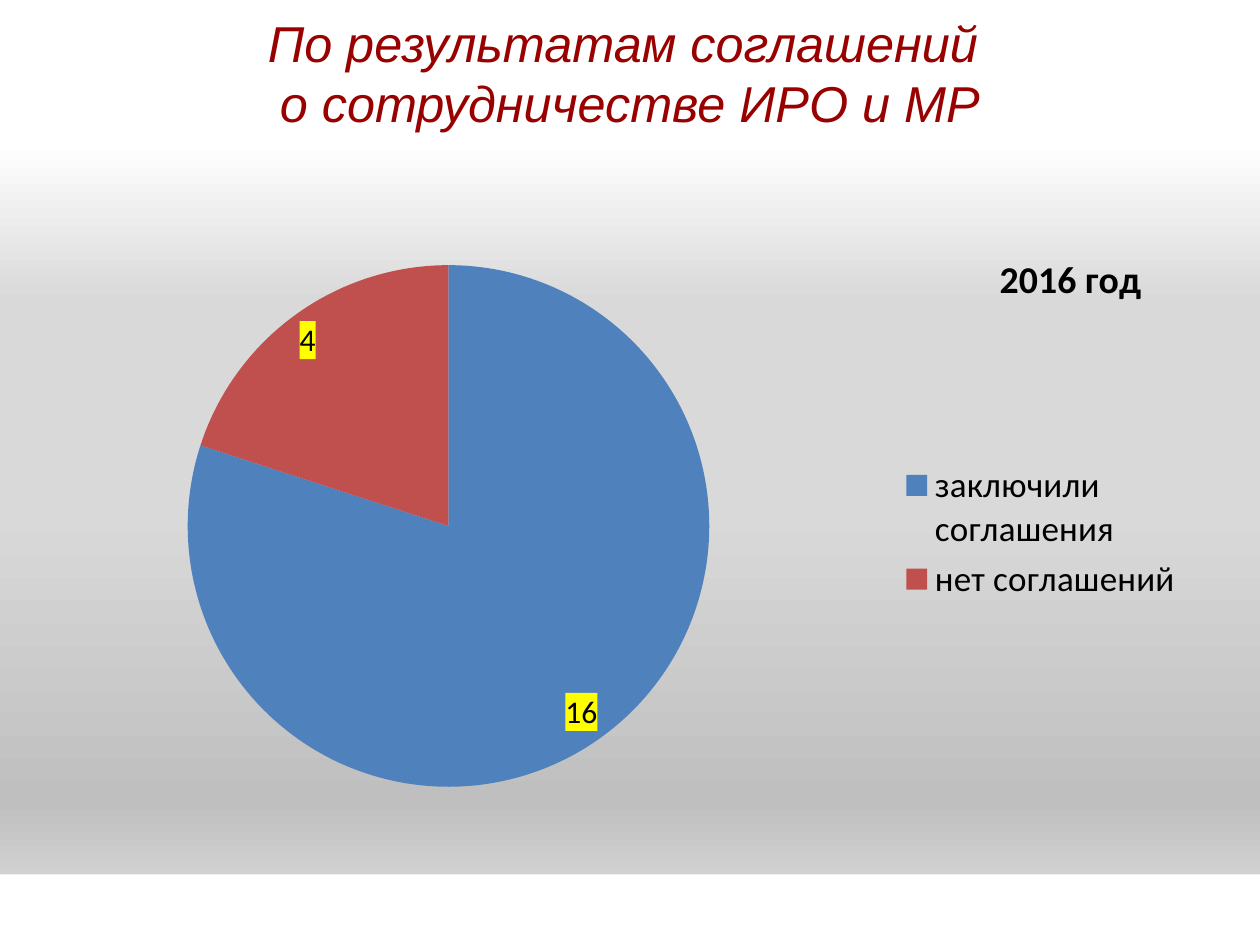
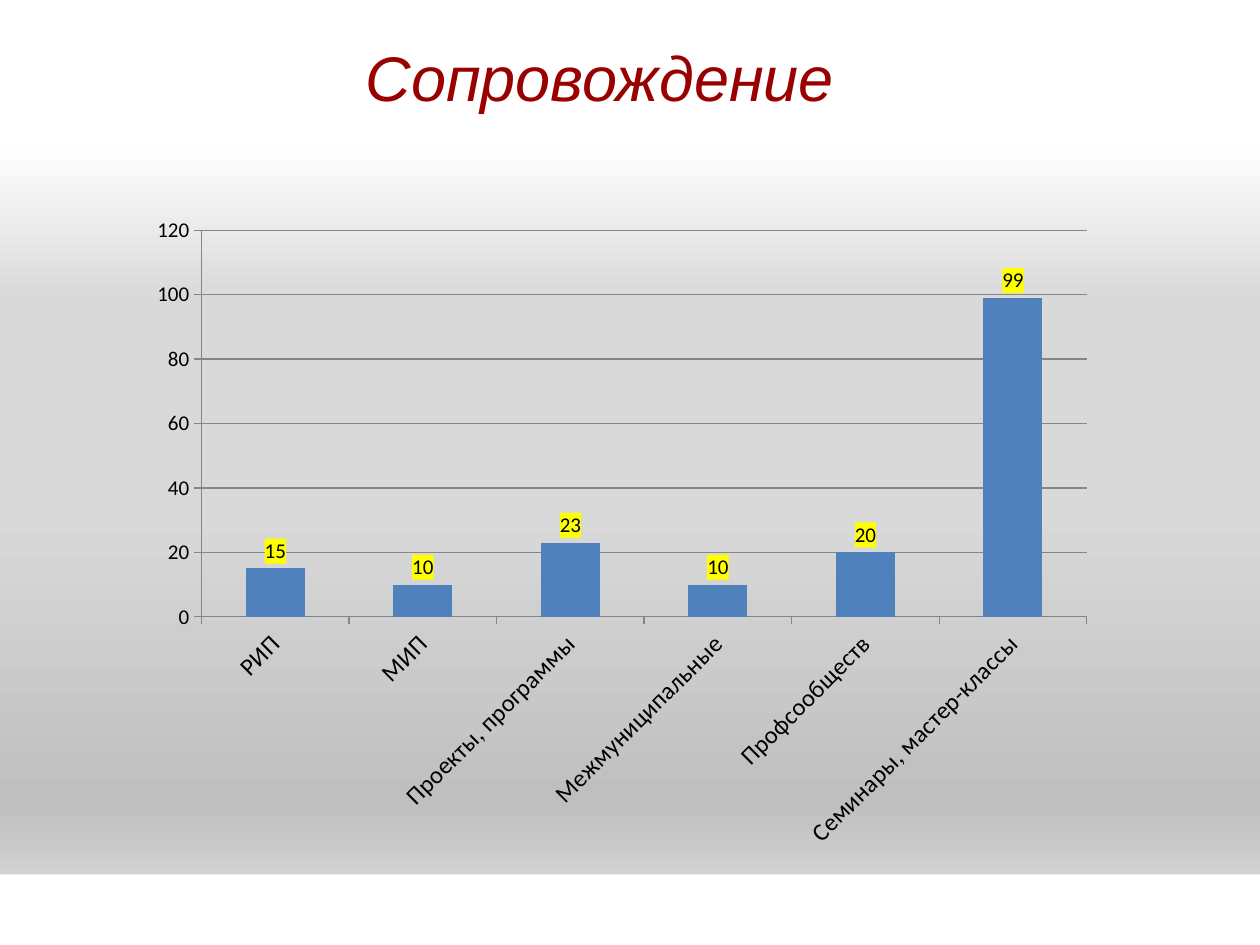
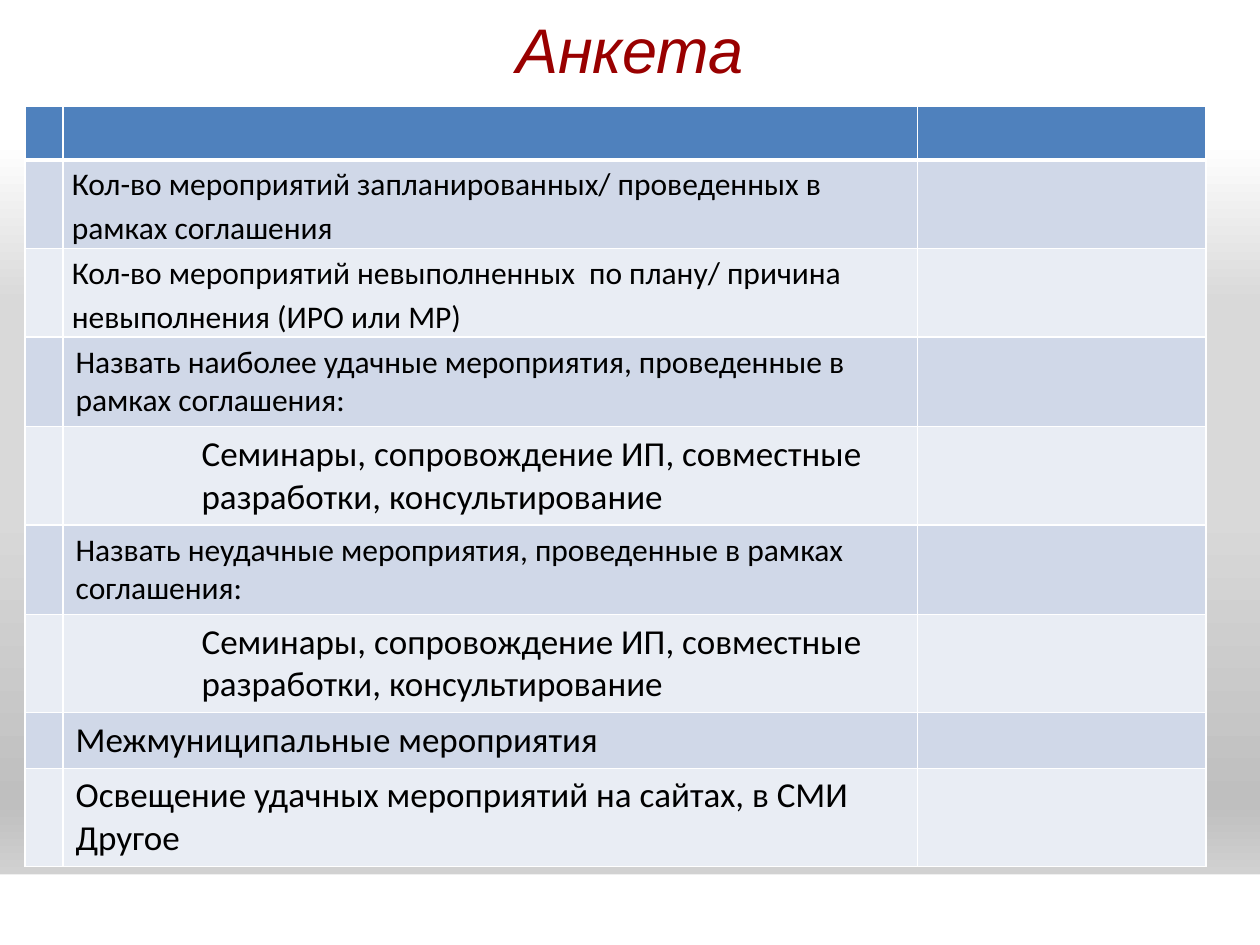
from dataclasses import dataclass

from lxml.etree import SubElement
from pptx import Presentation
from pptx.chart.data import CategoryChartData
from pptx.dml.color import RGBColor
from pptx.enum.chart import XL_CHART_TYPE, XL_LABEL_POSITION, XL_LEGEND_POSITION, XL_TICK_MARK
from pptx.enum.shapes import MSO_SHAPE
from pptx.enum.text import MSO_ANCHOR, MSO_AUTO_SIZE, PP_ALIGN
from pptx.oxml.ns import qn
from pptx.util import Inches, Pt


@dataclass(frozen=True)
class Theme:
    title: str = "990000"
    text: str = "000000"
    white: str = "FFFFFF"
    blue: str = "4F81BD"
    red: str = "C0504D"
    highlight: str = "FFFF00"
    grid: str = "868686"
    bands: tuple = ("D0D8E8", "E9EDF4")
    backdrop: tuple = ((0, "FFFFFF"), (15, "FFFFFF"), (32, "D9D9D9"),
                       (54, "D9D9D9"), (85, "BFBFBF"), (100, "E6E6E6"))
    title_font: str = "Arial"
    body_font: str = "Calibri"
    title_size: float = 36
    long_title_size: float = 28.8
    chart_title_size: float = 21.6
    large: float = 20
    body: float = 18
    category_size: float = 14
    axis_size: float = 12
    outline: float = 0.75


def rgb(value):
    return RGBColor.from_string(value)


def paint(fill, color):
    fill.solid()
    fill.fore_color.rgb = rgb(color)


def add_solid_fill(parent, color):
    SubElement(SubElement(parent, qn("a:solidFill")), qn("a:srgbClr"), val=color)


def style_font(font, name, size, color):
    font.name = name
    font.size = Pt(size)
    font.color.rgb = rgb(color)


def place_in_chart(part, inner=False, **fractions):
    """Give a chart part a manual layout, as fractions of the chart area."""
    layout = part.find(qn("c:layout"))
    if layout is None:
        layout = SubElement(part, qn("c:layout"))
        part.insert(0, layout)
    manual = SubElement(layout, qn("c:manualLayout"))
    if inner:
        SubElement(manual, qn("c:layoutTarget"), val="inner")
    for axis in "xy":
        SubElement(manual, qn(f"c:{axis}Mode"), val="edge")
    for key, fraction in fractions.items():
        SubElement(manual, qn(f"c:{key}"), val=str(fraction))


class Deck:
    def __init__(self, theme):
        self.theme = theme
        self.prs = Presentation()
        self.prs.slide_width = Inches(10)
        self.prs.slide_height = Inches(7.5)
        self.slide = None
        self.set_backdrop()

    def set_backdrop(self):
        master = self.prs.slide_master
        fill = master.background.fill
        fill.gradient()
        fill.gradient_angle = 270
        stops = master._element.find(".//" + qn("a:gsLst"))
        for stop in list(stops):
            stops.remove(stop)
        for percent, color in self.theme.backdrop:
            stop = SubElement(stops, qn("a:gs"), pos=str(percent * 1000))
            SubElement(stop, qn("a:srgbClr"), val=color)

    def add_footer_band(self):
        """Draw the white band and move it to the back of the master."""
        band = self.slide.shapes.add_shape(
            MSO_SHAPE.RECTANGLE, Inches(0), Inches(6.94), Inches(10.01), Inches(0.58))
        band.shadow.inherit = False
        paint(band.fill, self.theme.white)
        band.line.fill.background()
        band._element.nvSpPr.cNvPr.set("id", "20")
        self.prs.slide_master._element.cSld.spTree.insert(2, band._element)

    def add_slide(self, text, left, top, width, height, size):
        first = self.slide is None
        self.slide = self.prs.slides.add_slide(self.prs.slide_layouts[5])
        if first:
            self.add_footer_band()
        title = self.slide.shapes.title
        title.left, title.top = Inches(left), Inches(top)
        title.width, title.height = Inches(width), Inches(height)
        paint(title.fill, self.theme.white)
        frame = title.text_frame
        frame.text = text
        frame.auto_size = MSO_AUTO_SIZE.NONE
        frame.vertical_anchor = MSO_ANCHOR.MIDDLE
        paragraph = frame.paragraphs[0]
        paragraph.alignment = PP_ALIGN.CENTER
        style_font(paragraph.font, self.theme.title_font, size, self.theme.title)
        paragraph.font.italic = True
        for run in paragraph.runs:
            outline = SubElement(run._r.get_or_add_rPr(), qn("a:ln"),
                                 w=str(Pt(self.theme.outline)))
            add_solid_fill(outline, self.theme.title)

    def add_chart(self, kind, left, top, width, height, name, values, plot_box):
        data = CategoryChartData()
        data.categories = list(values)
        data.add_series(name, list(values.values()))
        chart = self.slide.shapes.add_chart(
            kind, Inches(left), Inches(top), Inches(width), Inches(height), data).chart
        style_font(chart.font, self.theme.body_font, self.theme.body, self.theme.text)
        chart.has_title = chart.has_legend = False
        place_in_chart(chart._chartSpace.chart.plotArea, inner=True,
                       **dict(zip("xywh", plot_box)))
        return chart

    def add_value_labels(self, chart, size, position):
        plot = chart.plots[0]
        plot.has_data_labels = True
        labels = plot.data_labels
        labels.show_value = True
        labels.show_percentage = False
        labels.position = position
        style_font(labels.font, self.theme.body_font, size, self.theme.text)
        box = SubElement(labels._element, qn("c:spPr"))
        add_solid_fill(box, self.theme.highlight)
        labels._element.find(qn("c:txPr")).addprevious(box)

    def add_pie(self, *place, name, values, plot_box, colors):
        theme = self.theme
        chart = self.add_chart(XL_CHART_TYPE.PIE, *place, name, values, plot_box)
        for index, color in enumerate(colors):
            paint(chart.series[0].points[index].format.fill, color)
        self.add_value_labels(chart, theme.body, XL_LABEL_POSITION.INSIDE_END)
        chart.has_legend = True
        chart.legend.position = XL_LEGEND_POSITION.RIGHT
        chart.legend.include_in_layout = False
        style_font(chart.legend.font, theme.body_font, theme.large, theme.text)
        chart.has_title = True
        heading = chart.chart_title.text_frame
        heading.text = name
        font = heading.paragraphs[0].font
        style_font(font, theme.body_font, theme.chart_title_size, theme.text)
        font.bold = True
        place_in_chart(chart.chart_title._element, x=0.82, y=0.04)

    def add_columns(self, *place, name, values, plot_box):
        theme = self.theme
        chart = self.add_chart(XL_CHART_TYPE.COLUMN_CLUSTERED, *place, name, values, plot_box)
        plot = chart.plots[0]
        plot.gap_width = 150
        plot.vary_by_categories = False
        paint(chart.series[0].format.fill, theme.blue)
        self.add_value_labels(chart, theme.axis_size, XL_LABEL_POSITION.OUTSIDE_END)
        for axis, size in ((chart.category_axis, theme.category_size),
                           (chart.value_axis, theme.axis_size)):
            axis.major_tick_mark = XL_TICK_MARK.OUTSIDE
            axis.minor_tick_mark = XL_TICK_MARK.NONE
            axis.format.line.color.rgb = rgb(theme.grid)
            style_font(axis.tick_labels.font, theme.body_font, size, theme.text)
        names = chart.category_axis._element.find(qn("c:txPr"))
        names.find(qn("a:bodyPr")).set("rot", str(-45 * 60000))
        scale = chart.value_axis
        scale.minimum_scale, scale.maximum_scale, scale.major_unit = 0, 120, 20
        scale.has_major_gridlines = True
        scale.major_gridlines.format.line.color.rgb = rgb(theme.grid)

    def add_questionnaire(self, left, top, column_widths, header_height, questions):
        """Lay out the questions in the middle column under an empty header."""
        heights = [header_height] + [question.height for question in questions]
        table = self.slide.shapes.add_table(
            len(heights), len(column_widths), Inches(left), Inches(top),
            Inches(sum(column_widths)), Inches(sum(heights))).table
        table.horz_banding = False
        for column, width in zip(table.columns, column_widths):
            column.width = Inches(width)
        for index, (row, height) in enumerate(zip(table.rows, heights)):
            row.height = Inches(height)
            color = self.theme.bands[(index - 1) % 2] if index else self.theme.blue
            for cell in row.cells:
                self.add_borders(cell, top=3 if index == 1 else 1, bottom=1 if index else 3)
                paint(cell.fill, color)
        for index, question in enumerate(questions, 1):
            self.fill_question(table.cell(index, 1), question)

    def add_borders(self, cell, top, bottom):
        properties = cell._tc.get_or_add_tcPr()
        for side, width in (("L", 1), ("R", 1), ("T", top), ("B", bottom)):
            add_solid_fill(SubElement(properties, qn(f"a:ln{side}"), w=str(Pt(width))),
                           self.theme.white)

    def fill_question(self, cell, question):
        cell.text = question.text
        if question.compact:
            cell.margin_left = cell.margin_right = Inches(0.07)
            cell.margin_top = cell.margin_bottom = Inches(0)
        for paragraph in cell.text_frame.paragraphs:
            if question.compact:
                paragraph.line_spacing = 1.15
            if question.indent:
                properties = paragraph._p.get_or_add_pPr()
                properties.set("marL", str(Inches(question.indent)))
                properties.set("indent", "0")
            style_font(paragraph.font, self.theme.body_font, question.size, self.theme.text)


@dataclass(frozen=True)
class Question:
    text: str
    height: float
    size: float
    compact: bool = False
    indent: float = 0


def main():
    theme = Theme()
    deck = Deck(theme)

    deck.add_slide("По результатам соглашений \vо сотрудничестве ИРО и МР",
                   0, 0, 10, 1.15, theme.long_title_size)
    deck.add_pie(0.5, 1.75, 9, 4.95, name="2016 год",
                 values={"заключили соглашения": 16, "нет соглашений": 4},
                 plot_box=(0.11, 0.07, 0.46, 0.84), colors=(theme.blue, theme.red))

    deck.add_slide("Сопровождение", 0.98, 0.03, 7.56, 1.15, theme.title_size)
    deck.add_columns(1.06, 1.62, 7.72, 5.2, name="Series 1",
                     values={"РИП": 15, "МИП": 10, "Проекты, программы": 23,
                             "Межмуниципальные": 10, "Профсообществ": 20,
                             "Семинары, мастер-классы": 99},
                     plot_box=(0.07, 0.04, 0.91, 0.59))

    deck.add_slide("Анкета", 0, 0, 10, 0.76, theme.title_size)
    formats = Question("Семинары, сопровождение ИП, совместные разработки, консультирование",
                       0.78, theme.large, indent=1)
    deck.add_questionnaire(0.2, 0.84, (0.3, 6.78, 2.29), 0.43, (
        Question("Кол-во мероприятий запланированных/ проведенных в рамках соглашения",
                 0.7, theme.body, compact=True),
        Question("Кол-во мероприятий невыполненных  по плану/ причина "
                 "невыполнения (ИРО или МР)", 0.7, theme.body, compact=True),
        Question("Назвать наиболее удачные мероприятия, проведенные в рамках соглашения:",
                 0.71, theme.body),
        formats,
        Question("Назвать неудачные мероприятия, проведенные в рамках соглашения:",
                 0.71, theme.body),
        formats,
        Question("Межмуниципальные мероприятия", 0.44, theme.large),
        Question("Освещение удачных мероприятий на сайтах, в СМИ\nДругое", 0.78, theme.large),
    ))

    deck.prs.save("out.pptx")


if __name__ == "__main__":
    main()
